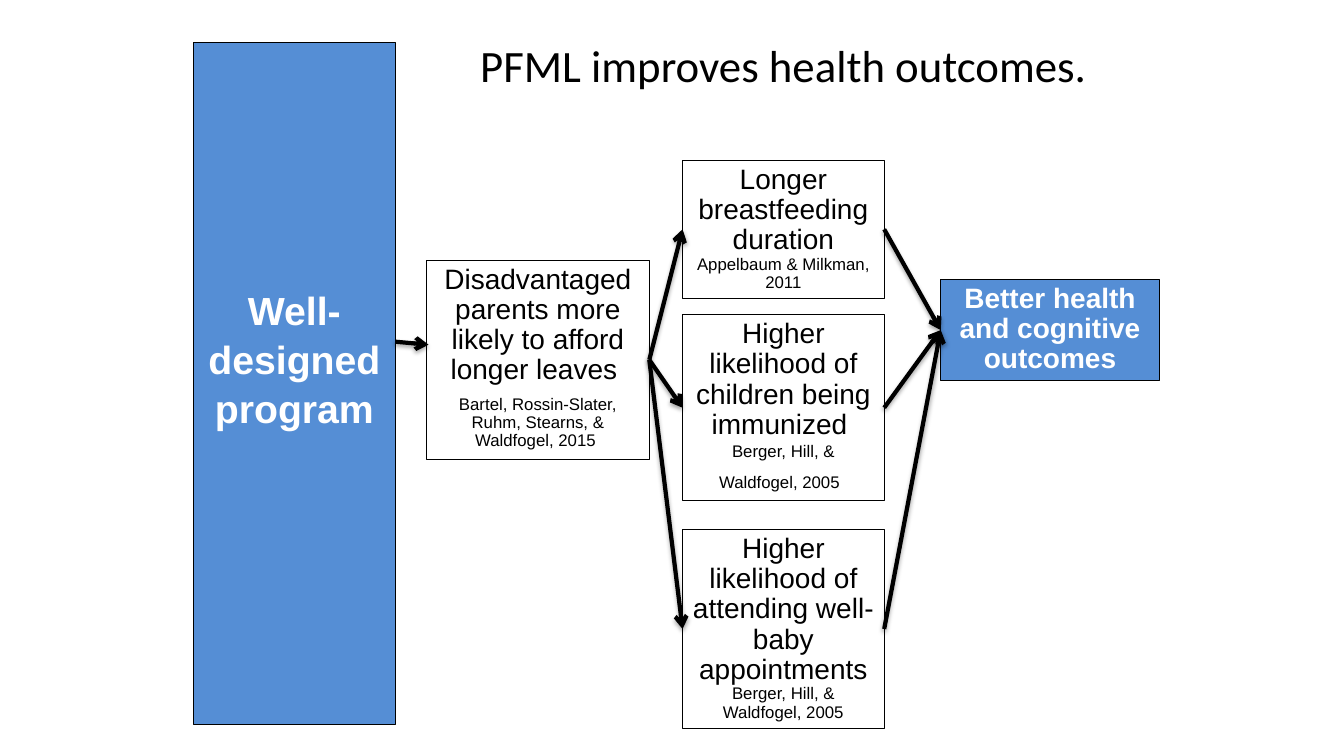
from lxml import etree
from pptx import Presentation
from pptx.dml.color import RGBColor
from pptx.enum import shapes, text
from pptx.oxml import parse_xml
from pptx.oxml.ns import nsdecls, qn
from pptx.util import Inches, Pt

BLACK = RGBColor(0x00, 0x00, 0x00)
WHITE = RGBColor(0xFF, 0xFF, 0xFF)
BLUE = RGBColor(0x55, 0x8E, 0xD5)

SOFT_SHADOW = f"""<a:effectLst {nsdecls('a')}>
  <a:outerShdw blurRad="39370" dist="22860" dir="5400000" rotWithShape="0">
    <a:srgbClr val="000000"><a:alpha val="35000"/></a:srgbClr>
  </a:outerShdw>
</a:effectLst>"""

deck = Presentation()
deck.slide_width, deck.slide_height = Inches(13.33), Inches(7.5)
page = deck.slides.add_slide(deck.slide_layouts[6])


def write(frame, paragraphs, font_format):
    """Fill a frame; each paragraph is a list of (wording, size) spans."""
    frame.word_wrap = True
    frame.vertical_anchor = text.MSO_ANCHOR.TOP
    for index, spans in enumerate(paragraphs):
        para = frame.paragraphs[0] if index == 0 else frame.add_paragraph()
        para.alignment = text.PP_ALIGN.CENTER
        for wording, size in spans:
            span = para.add_run()
            span.text = wording
            span.font.size = Pt(size)
            span.font.color.rgb = font_format["color"]
            for name in ("name", "bold"):
                setattr(span.font, name, font_format[name])


def add_arrow(start, end):
    arrow = page.shapes.add_connector(
        shapes.MSO_CONNECTOR.STRAIGHT, *(Inches(n) for n in start + end))
    arrow.line.color.rgb = BLACK
    arrow.line.width = Pt(3)
    etree.SubElement(arrow.line._get_or_add_ln(), qn("a:tailEnd"), type="arrow")
    arrow._element.spPr.append(parse_xml(SOFT_SHADOW))
    return arrow


# name: (left, top, width, height, filled, paragraphs)
steps = {
    "leaves": (4.23, 2.58, 2.21, 1.98, False, [
        [("Disadvantaged parents more likely to afford longer leaves ", 20)],
        [("Bartel, Rossin-Slater, Ruhm, Stearns, & Waldfogel, 2015 ", 12)]]),
    "breastfeeding": (6.77, 1.59, 2, 1.37, False, [
        [("Longer breastfeeding duration ", 20), ("Appelbaum & Milkman, 2011", 12)]]),
    "outcomes": (9.33, 2.77, 2.17, 1.01, True, [
        [("Better health and cognitive outcomes", 20)]]),
    "immunized": (6.77, 3.12, 2, 1.85, False, [
        [("Higher likelihood of children being immunized ", 20)],
        [("Berger, Hill, & Waldfogel, 2005", 12), (" ", 20)]]),
    "appointments": (6.77, 5.25, 2, 1.98, False, [
        [("Higher likelihood of attending well-baby appointments ", 20),
         ("Berger, Hill, & Waldfogel, 2005", 12)]]),
    "program": (1.92, 0.42, 2, 6.77, True, [[("Well-designed program", 28)]]),
}

boxes = {}
for name, (left, top, width, height, filled, paragraphs) in steps.items():
    box = page.shapes.add_shape(
        shapes.MSO_SHAPE.RECTANGLE,
        Inches(left), Inches(top), Inches(width), Inches(height))
    box.shadow.inherit = False
    box.line.color.rgb = BLACK
    box.line.width = Pt(0.75)
    if filled:
        box.fill.solid()
        box.fill.fore_color.rgb = BLUE
    else:
        box.fill.background()
    write(box.text_frame, paragraphs, {
        "name": "Arial", "bold": filled, "color": WHITE if filled else BLACK})
    for para in box.text_frame.paragraphs:
        para.line_spacing = 0.9
    boxes[name] = box

boxes["leaves"].text_frame.paragraphs[0].space_after = Pt(7)
boxes["immunized"].text_frame.paragraphs[1].line_spacing = 1.0
boxes["program"].text_frame.margin_top = Inches(2.4)
boxes["program"].text_frame.paragraphs[0].line_spacing = 1.04

add_arrow((3.92, 3.39), (4.25, 3.42))
for effect in ("breastfeeding", "immunized", "appointments"):
    for source, target in (("leaves", effect), (effect, "outcomes")):
        arrow = add_arrow((0, 0), (1, 1))
        arrow.begin_connect(boxes[source], 3)
        arrow.end_connect(boxes[target], 1)

title = page.shapes.add_textbox(Inches(4.23), Inches(0.33), Inches(7.08), Inches(0.64))
write(title.text_frame, [[("PFML improves health outcomes.", 32)]],
      {"name": "Calibri", "bold": False, "color": BLACK})

deck.save("out.pptx")
